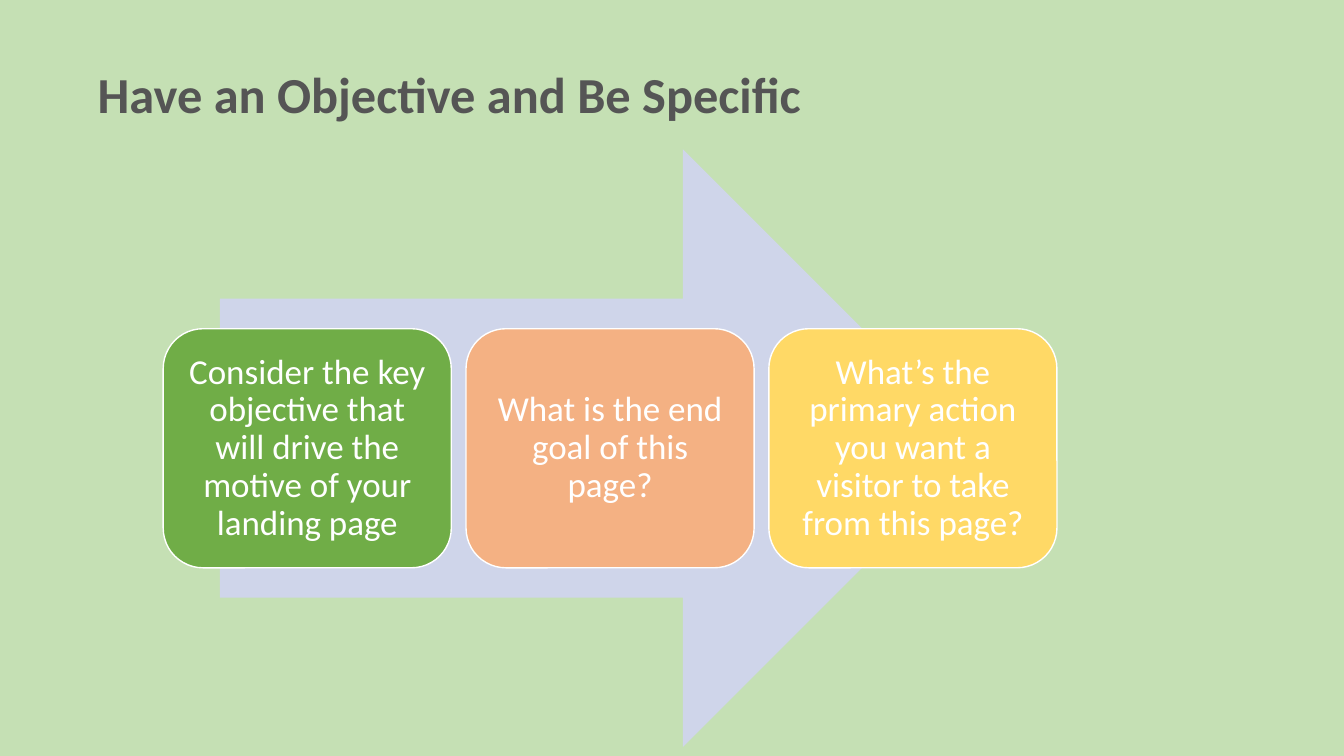
from dataclasses import dataclass

from pptx import Presentation
from pptx.dml.color import RGBColor
from pptx.enum.shapes import MSO_SHAPE
from pptx.enum.text import MSO_ANCHOR, MSO_AUTO_SIZE, PP_ALIGN
from pptx.util import Pt

RIGHT_ARROW = MSO_SHAPE.RIGHT_ARROW
ROUNDED = MSO_SHAPE.ROUNDED_RECTANGLE
MIDDLE = MSO_ANCHOR.MIDDLE
NO_AUTOFIT = MSO_AUTO_SIZE.NONE
LEFT = PP_ALIGN.LEFT
CENTER = PP_ALIGN.CENTER

TITLE_ONLY = 5
CARD_LEFT, CARD_TOP = 116.6, 234.8
CARD_WIDTH, CARD_HEIGHT = 205.8, 170.8
CARD_PITCH = 216.3


@dataclass(frozen=True)
class Theme:
    font: str = "Calibri"
    background: str = "C5E0B4"
    title: str = "555555"
    arrow: str = "CFD5EA"
    white: str = "FFFFFF"
    green: str = "70AD47"
    orange: str = "F4B183"
    yellow: str = "FFD966"
    title_size: float = 36
    card_size: float = 25
    line_spacing: float = 0.9


class PageBuilder:
    def __init__(self, page, theme):
        self.page = page
        self.theme = theme

    def background(self):
        fill = self.page.background.fill
        fill.solid()
        fill.fore_color.rgb = RGBColor.from_string(self.theme.background)

    def set_text(self, box, text, size, color, align, bold=False):
        frame = box.text_frame
        frame.text = text
        frame.word_wrap = True
        frame.auto_size = NO_AUTOFIT
        frame.vertical_anchor = MIDDLE
        para = frame.paragraphs[0]
        para.alignment = align
        para.line_spacing = self.theme.line_spacing
        font = para.runs[0].font
        font.name = self.theme.font
        font.size = Pt(size)
        font.bold = bold
        font.color.rgb = RGBColor.from_string(color)

    def title(self, text, left, top, width, height):
        box = self.page.shapes.title
        box.left, box.top = Pt(left), Pt(top)
        box.width, box.height = Pt(width), Pt(height)
        self.set_text(box, text, self.theme.title_size, self.theme.title, LEFT, True)

    def shape(self, kind, fill, left, top, width, height):
        box = self.page.shapes.add_shape(
            kind, Pt(left), Pt(top), Pt(width), Pt(height))
        box.shadow.inherit = False
        box.fill.solid()
        box.fill.fore_color.rgb = RGBColor.from_string(fill)
        box.line.fill.background()
        return box

    def card(self, text, fill, left, top, width, height):
        box = self.shape(ROUNDED, fill, left, top, width, height)
        box.line.color.rgb = RGBColor.from_string(self.theme.white)
        box.line.width = Pt(1)
        frame = box.text_frame
        frame.margin_left = frame.margin_right = Pt(7.2)
        frame.margin_top = frame.margin_bottom = Pt(7.2)
        self.set_text(box, text, self.theme.card_size, self.theme.white, CENTER)


def main():
    deck = Presentation()
    deck.slide_width, deck.slide_height = Pt(960), Pt(540)
    theme = Theme()
    page = deck.slides.add_slide(deck.slide_layouts[TITLE_ONLY])
    builder = PageBuilder(page, theme)

    builder.background()
    builder.title("Have an Objective and Be Specific", 62.6, 17.3, 630.7, 104.4)
    builder.shape(RIGHT_ARROW, theme.arrow, 157, 106.6, 544.3, 427)

    cards = [
        ("Consider the key objective that will drive the motive of your landing page",
         theme.green),
        ("What is the end goal of this page?", theme.orange),
        ("What’s the primary action you want a visitor to take from this page?",
         theme.yellow),
    ]
    for index, (text, fill) in enumerate(cards):
        builder.card(text, fill, CARD_LEFT + index * CARD_PITCH, CARD_TOP,
                     CARD_WIDTH, CARD_HEIGHT)

    deck.save("out.pptx")


if __name__ == "__main__":
    main()
